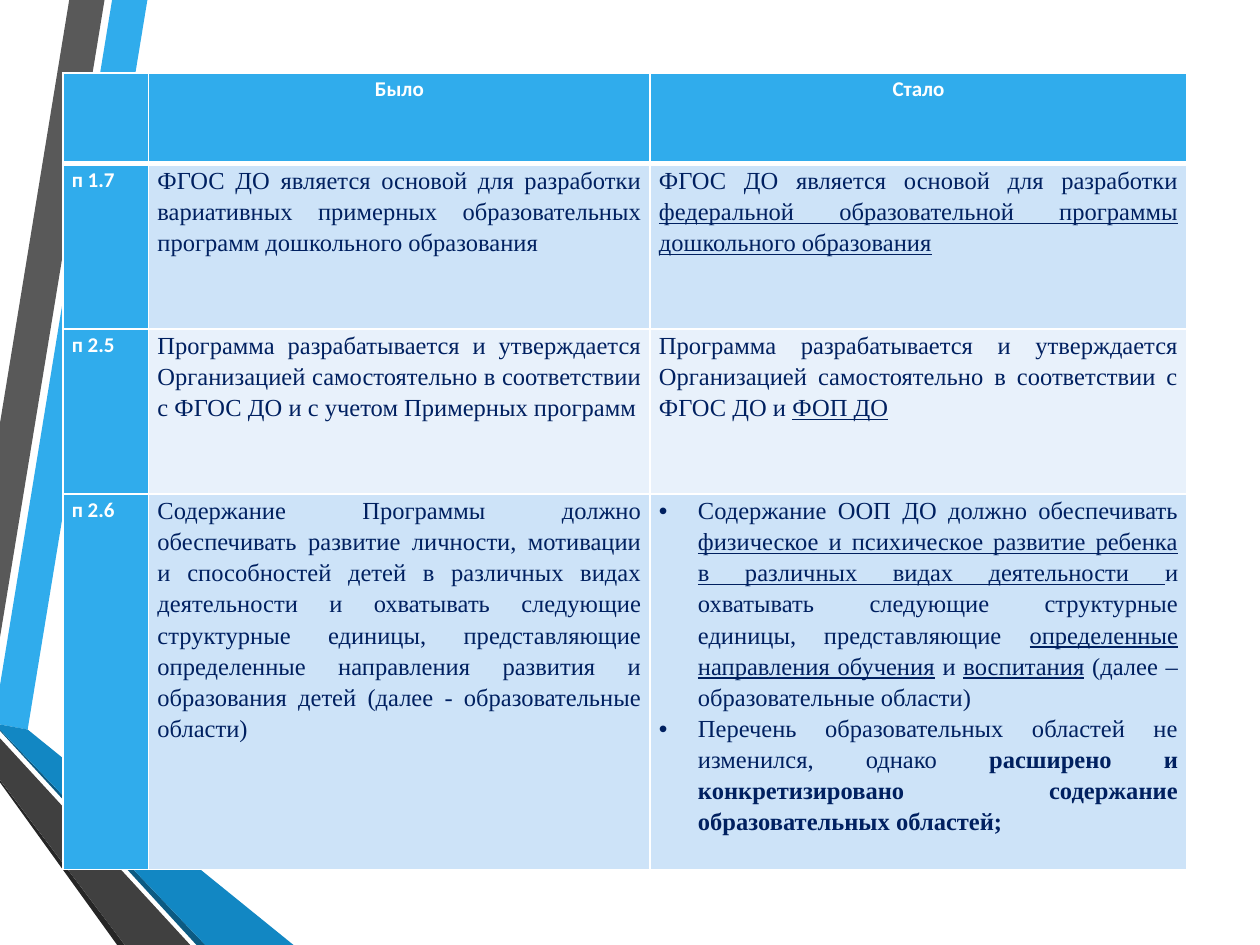
from pptx import Presentation
from pptx.util import Inches, Pt
from pptx.dml.color import RGBColor
from pptx.enum.text import PP_ALIGN as Align
from pptx.oxml.ns import qn
from lxml.etree import SubElement as Sub

BLUE, WHITE, NAVY = "30ACEC", "FFFFFF", "002060"
BANDS = ["CDE3F8", "E8F1FB"]
COLS = [0.68, 3.98, 4.26]
ROWS = [0.72, 1.31, 1.31, 2.98]

BARS = [
    (BLUE, [(0, 5.44), (0, 5.75), (0.22, 5.79), (1.17, 0), (0.89, 0)]),
    ("595959", [(0.83, 0), (0.55, 0), (0, 3.36), (0, 5.06)]),
    ("262626", [(0, 6.19), (0, 6.21), (0.93, 7.5), (0.99, 7.5)]),
    ("0C5A82", [(0, 5.79), (0, 5.8), (1.56, 7.5), (1.63, 7.5)]),
    ("1287C3", [(0, 5.79), (1.63, 7.5), (2.33, 7.5), (0.22, 5.79), (0, 5.75)]),
    ("404040", [(0, 6.19), (0.99, 7.5), (1.51, 7.5), (0, 5.86)]),
]

HEADS = ["", "Было", "Стало"]
ITEMS = [
    ("п 1.7",
     "ФГОС ДО является основой для разработки вариативных примерных "
     "образовательных программ дошкольного образования",
     [[("ФГОС ДО является основой для разработки ", ""),
       ("федеральной образовательной программы дошкольного образования", "u")]]),
    ("п 2.5",
     "Программа разрабатывается и утверждается Организацией самостоятельно "
     "в соответствии с ФГОС ДО и с учетом Примерных программ",
     [[("Программа разрабатывается и утверждается Организацией самостоятельно "
        "в соответствии с ФГОС ДО и ", ""),
       ("ФОП ДО", "u")]]),
    ("п 2.6",
     "Содержание Программы должно обеспечивать развитие личности, мотивации "
     "и способностей детей в различных видах деятельности и охватывать "
     "следующие структурные единицы, представляющие определенные направления "
     "развития и образования детей (далее - образовательные области)",
     [[("Содержание ООП ДО должно обеспечивать ", ""),
       ("физическое и психическое развитие ребенка в различных видах "
        "деятельности ", "u"),
       ("и охватывать следующие структурные единицы, представляющие ", ""),
       ("определенные направления обучения", "u"),
       (" и ", ""),
       ("воспитания", "u"),
       (" (далее – образовательные области) ", "")],
      [("Перечень образовательных областей не изменился, однако ", ""),
       ("расширено и конкретизировано содержание образовательных областей; ",
        "b")]]),
]


def color(code):
    return RGBColor.from_string(code)


def paint(fill, code):
    fill.solid()
    fill.fore_color.rgb = color(code)


def draw_bar(slide, code, points):
    first, *rest = [(Inches(x), Inches(y)) for x, y in points]
    pen = slide.shapes.build_freeform(*first)
    pen.add_line_segments(rest, close=True)
    bar = pen.convert_to_shape()
    bar.shadow.inherit = False
    paint(bar.fill, code)
    bar.line.fill.background()


def add_bullet(para):
    props = para._p.get_or_add_pPr()
    props.set("marL", str(Inches(0.31)))
    props.set("indent", str(-Inches(0.31)))
    Sub(props, qn("a:buFont"), typeface="Arial")
    Sub(props, qn("a:buChar"), char="•")


def write(para, text, size=14, font="Times New Roman", ink=NAVY,
          bold=False, under=False, align=Align.JUSTIFY):
    para.alignment = align
    para.line_spacing = 1.15
    run = para.add_run()
    run.text = text
    face = run.font
    face.size, face.name = Pt(size), font
    face.bold, face.underline = bold, under
    face.color.rgb = color(ink)


def write_label(cell, text, align=Align.JUSTIFY):
    if text:
        write(cell.text_frame.paragraphs[0], text, size=12, font="Calibri",
              ink=WHITE, bold=True, align=align)


def write_parts(cell, paras):
    frame = cell.text_frame
    for n, parts in enumerate(paras):
        para = frame.add_paragraph() if n else frame.paragraphs[0]
        for text, style in parts:
            write(para, text, bold=style == "b", under=style == "u")
        if len(paras) > 1:
            add_bullet(para)


def add_edge(props, side, width):
    edge = Sub(props, qn("a:ln" + side), w=str(Pt(width)))
    fill = Sub(edge, qn("a:solidFill"))
    Sub(fill, qn("a:srgbClr"), val=WHITE)


def style_cell(cell, row, col):
    cell.margin_left = cell.margin_right = Inches(0.07)
    cell.margin_top = cell.margin_bottom = 0
    props = cell._tc.get_or_add_tcPr()
    for side in "LRTB":
        thick = (row, side) in [(0, "B"), (1, "T")]
        add_edge(props, side, 3 if thick else 1)
    label = row == 0 or col == 0
    paint(cell.fill, BLUE if label else BANDS[(row - 1) % 2])


def add_grid(slide):
    frame = slide.shapes.add_table(
        len(ROWS), len(COLS), Inches(0.5), Inches(0.58),
        Inches(sum(COLS)), Inches(sum(ROWS)))
    grid = frame.table
    for col, width in zip(grid.columns, COLS):
        col.width = Inches(width)
    for row, height in zip(grid.rows, ROWS):
        row.height = Inches(height)
    for r in range(len(ROWS)):
        for c in range(len(COLS)):
            style_cell(grid.cell(r, c), r, c)
    for c, head in enumerate(HEADS):
        write_label(grid.cell(0, c), head, Align.CENTER)
    for r, (label, old, new) in enumerate(ITEMS, 1):
        write_label(grid.cell(r, 0), label)
        write_parts(grid.cell(r, 1), [[(old, "")]])
        write_parts(grid.cell(r, 2), new)


def main():
    deck = Presentation()
    deck.slide_width, deck.slide_height = Inches(10), Inches(7.5)
    slide = deck.slides.add_slide(deck.slide_layouts[6])
    paint(slide.background.fill, WHITE)
    for code, points in BARS:
        draw_bar(slide, code, points)
    add_grid(slide)
    deck.save("out.pptx")


if __name__ == "__main__":
    main()
